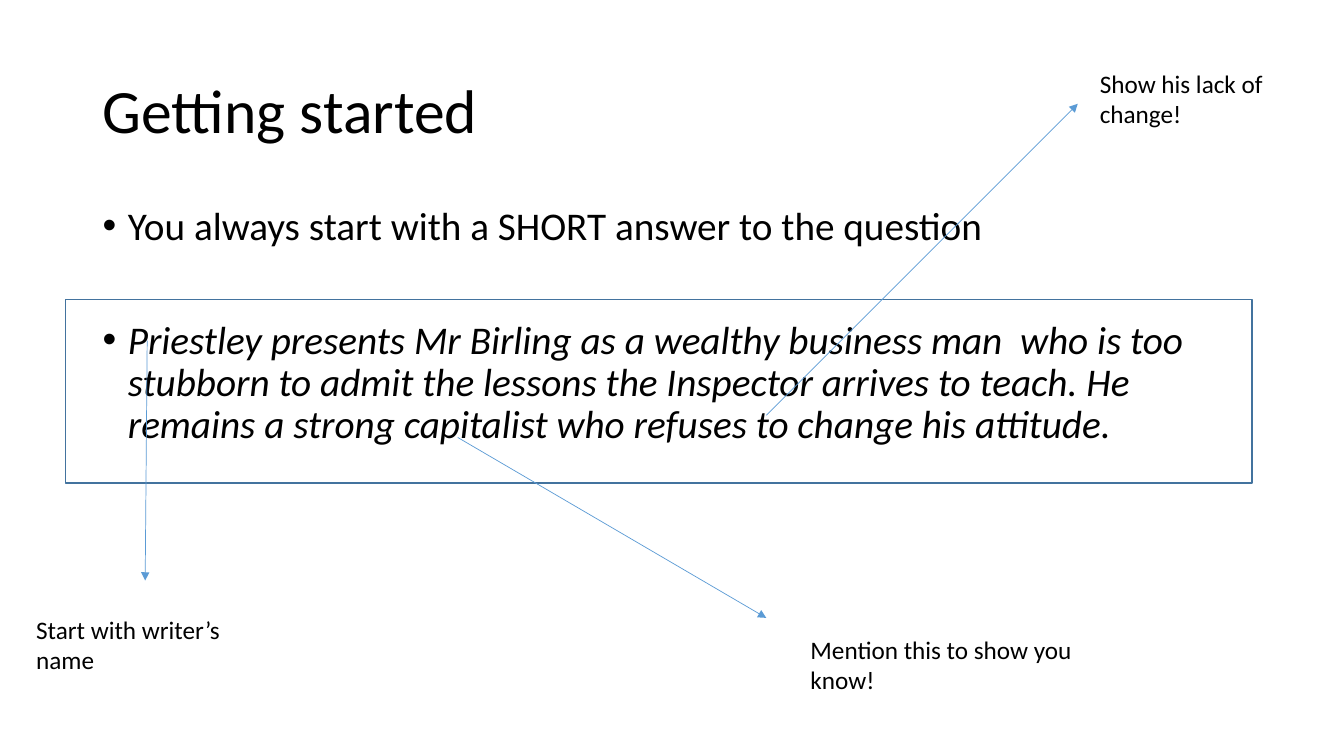
from pptx import Presentation
from pptx.dml.color import RGBColor
from pptx.enum.shapes import MSO_CONNECTOR, MSO_SHAPE
from pptx.enum.text import MSO_ANCHOR
from pptx.oxml.ns import qn
from pptx.util import Inches, Pt
from lxml import etree

FONT = "Calibri"
BLACK = RGBColor(0x00, 0x00, 0x00)
ARROW_BLUE = RGBColor(0x5B, 0x9B, 0xD5)
FRAME_BLUE = RGBColor(0x43, 0x73, 0x9E)

BULLETS = [
    # text, italic, space before in points
    ("You always start with a SHORT answer to the question", False, 10),
    ("Priestley presents Mr Birling as a wealthy business man  who is too "
     "stubborn to admit the lessons the Inspector arrives to teach. He remains "
     "a strong capitalist who refuses to change his attitude.", True, 51),
]

ANNOTATIONS = [
    # text, left, top, width, arrow start, arrow end
    ("Start with writer’s name", 0.26, 6.04, 2.18, (1.46, 3.38), (1.44, 5.76)),
    ("Mention this to show you know!", 7.94, 6.24, 2.87, (4.54, 4.34), (7.6, 6.13)),
    ("Show his lack of change!", 10.81, 0.63, 1.93, (7.6, 4.12), (10.69, 1.03)),
]


def add_text_frame(slide, left, top, width, height, anchor=MSO_ANCHOR.TOP):
    box = slide.shapes.add_textbox(
        Inches(left), Inches(top), Inches(width), Inches(height))
    frame = box.text_frame
    frame.word_wrap = True
    frame.vertical_anchor = anchor
    return frame


def add_run(paragraph, text, size, italic=False):
    run = paragraph.add_run()
    run.text = text
    run.font.name = FONT
    run.font.size = Pt(size)
    run.font.italic = italic
    run.font.color.rgb = BLACK


def add_title(slide, text):
    frame = add_text_frame(slide, 0.92, 0.4, 11.5, 1.45, MSO_ANCHOR.MIDDLE)
    paragraph = frame.paragraphs[0]
    paragraph.line_spacing = 0.9
    add_run(paragraph, text, 44)


def set_bullet(paragraph):
    properties = paragraph._p.get_or_add_pPr()
    properties.set("marL", str(Inches(0.25)))
    properties.set("indent", str(Inches(-0.25)))
    etree.SubElement(properties, qn("a:buFont")).set("typeface", "Arial")
    etree.SubElement(properties, qn("a:buChar")).set("char", "•")


def add_bullets(slide, bullets):
    frame = add_text_frame(slide, 0.92, 2, 11.5, 4.76)
    for index, (text, italic, space_before) in enumerate(bullets):
        paragraph = frame.add_paragraph() if index else frame.paragraphs[0]
        paragraph.line_spacing = 0.9
        paragraph.space_before = Pt(space_before)
        set_bullet(paragraph)
        add_run(paragraph, text, 28, italic)


def add_frame(slide, left, top, width, height):
    shape = slide.shapes.add_shape(
        MSO_SHAPE.RECTANGLE,
        Inches(left), Inches(top), Inches(width), Inches(height))
    shape.shadow.inherit = False
    shape.fill.background()
    shape.line.color.rgb = FRAME_BLUE
    shape.line.width = Pt(1)


def add_arrow(slide, start, end):
    points = [Inches(value) for value in start + end]
    connector = slide.shapes.add_connector(MSO_CONNECTOR.STRAIGHT, *points)
    connector.line.color.rgb = ARROW_BLUE
    connector.line.width = Pt(0.5)
    line = connector.line._get_or_add_ln()
    etree.SubElement(line, qn("a:tailEnd")).set("type", "triangle")
    etree.SubElement(connector._element.spPr, qn("a:effectLst"))


def add_annotation(slide, text, left, top, width, start, end):
    add_arrow(slide, start, end)
    frame = add_text_frame(slide, left, top, width, 0.71)
    add_run(frame.paragraphs[0], text, 18)


def main():
    presentation = Presentation()
    presentation.slide_width = Inches(13.33)
    presentation.slide_height = Inches(7.5)
    slide = presentation.slides.add_slide(presentation.slide_layouts[6])

    # Title and main points
    add_title(slide, "Getting started")
    add_bullets(slide, BULLETS)

    # Frame around the model answer
    add_frame(slide, 0.65, 2.97, 11.77, 1.82)

    # Notes with arrows from the model answer
    for annotation in ANNOTATIONS:
        add_annotation(slide, *annotation)

    presentation.save("out.pptx")


if __name__ == "__main__":
    main()
